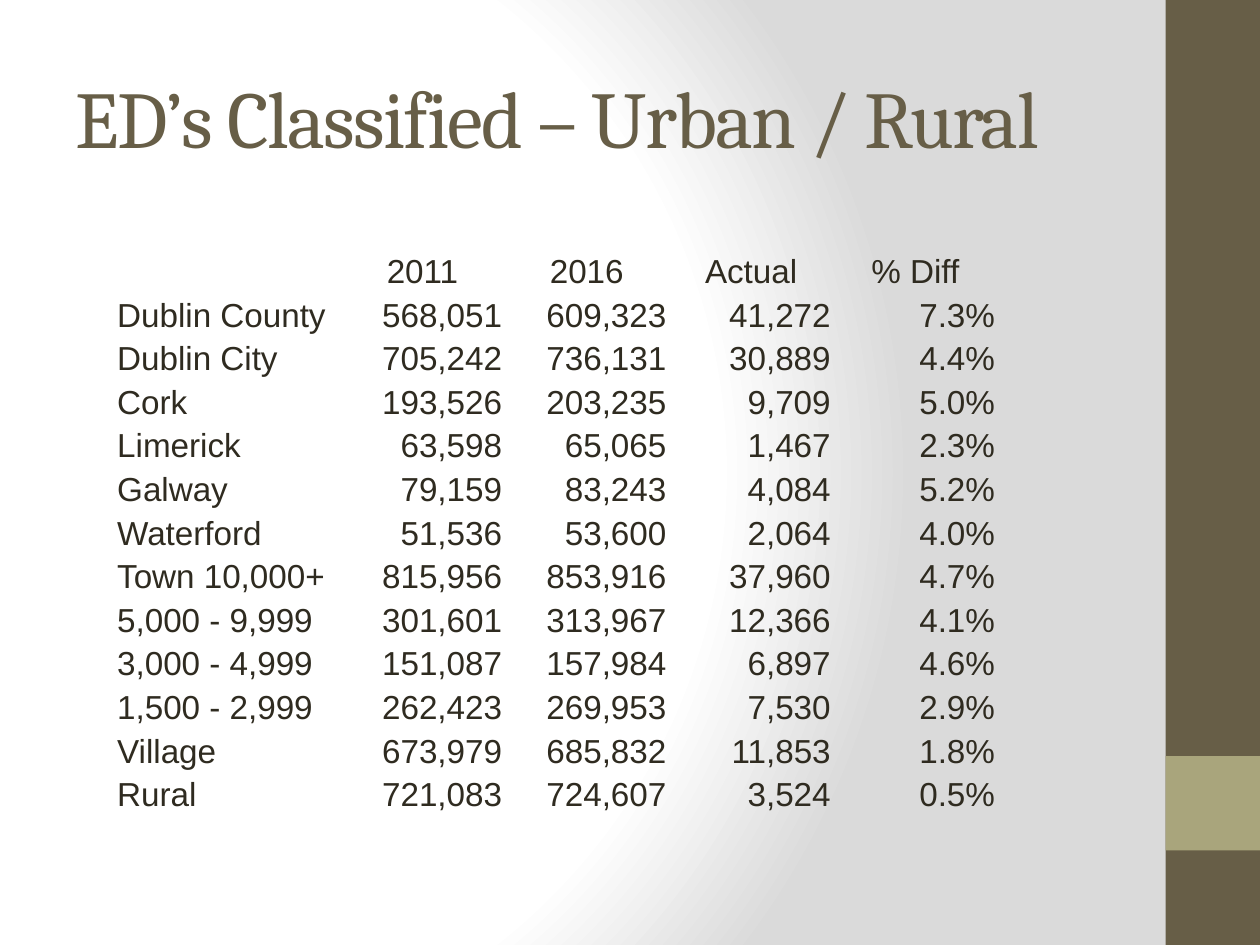
from dataclasses import dataclass

from pptx import Presentation
from pptx.dml.color import RGBColor as RGB
from pptx.enum.shapes import MSO_SHAPE as SHAPE
from pptx.enum.text import MSO_ANCHOR as ANCHOR, PP_ALIGN as ALIGN
from pptx.oxml import parse_xml
from pptx.oxml.ns import nsdecls
from pptx.util import Pt


@dataclass(frozen=True)
class Theme:
    brown: str = "675E47"
    olive: str = "A9A57C"
    ink: str = "2F2B20"
    white: str = "FFFFFF"
    grey: str = "DADADA"
    title_font: str = "Cambria"
    title_size: float = 46
    body_font: str = "Arial"
    body_size: float = 19


THEME = Theme()
NO_GRID_STYLE = "{2D5ABB26-0587-4C30-8999-92F81FD0307C}"

HEADER = ("", "2011", "2016", "Actual", "% Diff")
ROWS = [
    ("Dublin County", "568,051", "609,323", "41,272", "7.3%"),
    ("Dublin City", "705,242", "736,131", "30,889", "4.4%"),
    ("Cork", "193,526", "203,235", "9,709", "5.0%"),
    ("Limerick", "63,598", "65,065", "1,467", "2.3%"),
    ("Galway", "79,159", "83,243", "4,084", "5.2%"),
    ("Waterford", "51,536", "53,600", "2,064", "4.0%"),
    ("Town 10,000+", "815,956", "853,916", "37,960", "4.7%"),
    ("5,000 - 9,999", "301,601", "313,967", "12,366", "4.1%"),
    ("3,000 - 4,999", "151,087", "157,984", "6,897", "4.6%"),
    ("1,500 - 2,999", "262,423", "269,953", "7,530", "2.9%"),
    ("Village", "673,979", "685,832", "11,853", "1.8%"),
    ("Rural", "721,083", "724,607", "3,524", "0.5%"),
]


def set_background(s):
    stops = ((0, THEME.white), (75, THEME.white), (100, THEME.grey))
    gs = "".join(
        f'<a:gs pos="{pos * 1000}"><a:srgbClr val="{color}"/></a:gs>'
        for pos, color in stops
    )
    bg = parse_xml(
        f'<p:bg {nsdecls("p", "a")}><p:bgPr><a:gradFill rotWithShape="1">'
        f'<a:gsLst>{gs}</a:gsLst><a:path path="circle">'
        '<a:fillToRect l="20000" t="50000" r="100000" b="50000"/></a:path>'
        "</a:gradFill><a:effectLst/></p:bgPr></p:bg>"
    )
    s.element.cSld.insert(0, bg)


def add_block(s, x, y, w, h, color):
    sp = s.shapes.add_shape(SHAPE.RECTANGLE, Pt(x), Pt(y), Pt(w), Pt(h))
    sp.shadow.inherit = False
    sp.fill.solid()
    sp.fill.fore_color.rgb = RGB.from_string(color)
    sp.line.fill.background()


def style_runs(p, font, size, color):
    for r in p.runs:
        r.font.name = font
        r.font.size = Pt(size)
        r.font.color.rgb = RGB.from_string(color)


def add_title(s, text, x, y, w, h):
    tf = s.shapes.add_textbox(Pt(x), Pt(y), Pt(w), Pt(h)).text_frame
    tf.word_wrap = True
    tf.vertical_anchor = ANCHOR.MIDDLE
    tf.text = text
    p = tf.paragraphs[0]
    style_runs(p, THEME.title_font, THEME.title_size, THEME.brown)
    p.runs[0].font._element.set("spc", "-100")  # tighten by 1 pt


def fill_cell(cell, text, align):
    cell.fill.background()
    cell.vertical_anchor = ANCHOR.BOTTOM
    cell.margin_left = cell.margin_right = cell.margin_top = Pt(1.5)
    cell.margin_bottom = 0
    cell.text = text
    p = cell.text_frame.paragraphs[0]
    p.alignment = align
    style_runs(p, THEME.body_font, THEME.body_size, THEME.ink)


def add_population_table(s, x, y, label_w, value_w, row_h):
    data = [HEADER, *ROWS]
    widths = [label_w] + [value_w] * (len(HEADER) - 1)
    frame = s.shapes.add_table(
        len(data), len(widths), Pt(x), Pt(y), Pt(sum(widths)), Pt(row_h * len(data))
    )
    table = frame.table
    table.first_row = table.horz_banding = False
    table._tbl.tblPr[0].text = NO_GRID_STYLE
    for col, w in zip(table.columns, widths):
        col.width = Pt(w)
    for i, values in enumerate(data):
        table.rows[i].height = Pt(row_h)
        for j, text in enumerate(values):
            align = ALIGN.LEFT if j == 0 else ALIGN.CENTER if i == 0 else ALIGN.RIGHT
            fill_cell(table.cell(i, j), text, align)


def main():
    prs = Presentation()
    prs.slide_width, prs.slide_height = Pt(720), Pt(540)
    s = prs.slides.add_slide(prs.slide_layouts[6])

    # Background and side band
    set_background(s)
    add_block(s, 666, 0, 54, 540, THEME.brown)
    add_block(s, 666, 432, 54, 54, THEME.olive)

    # Title and figures
    add_title(s, "ED’s Classified – Urban / Rural", 36, 21.6, 600, 90)
    add_population_table(s, 65.5, 141, label_w=129, value_w=93.9, row_h=24.92)

    prs.save("out.pptx")


if __name__ == "__main__":
    main()
